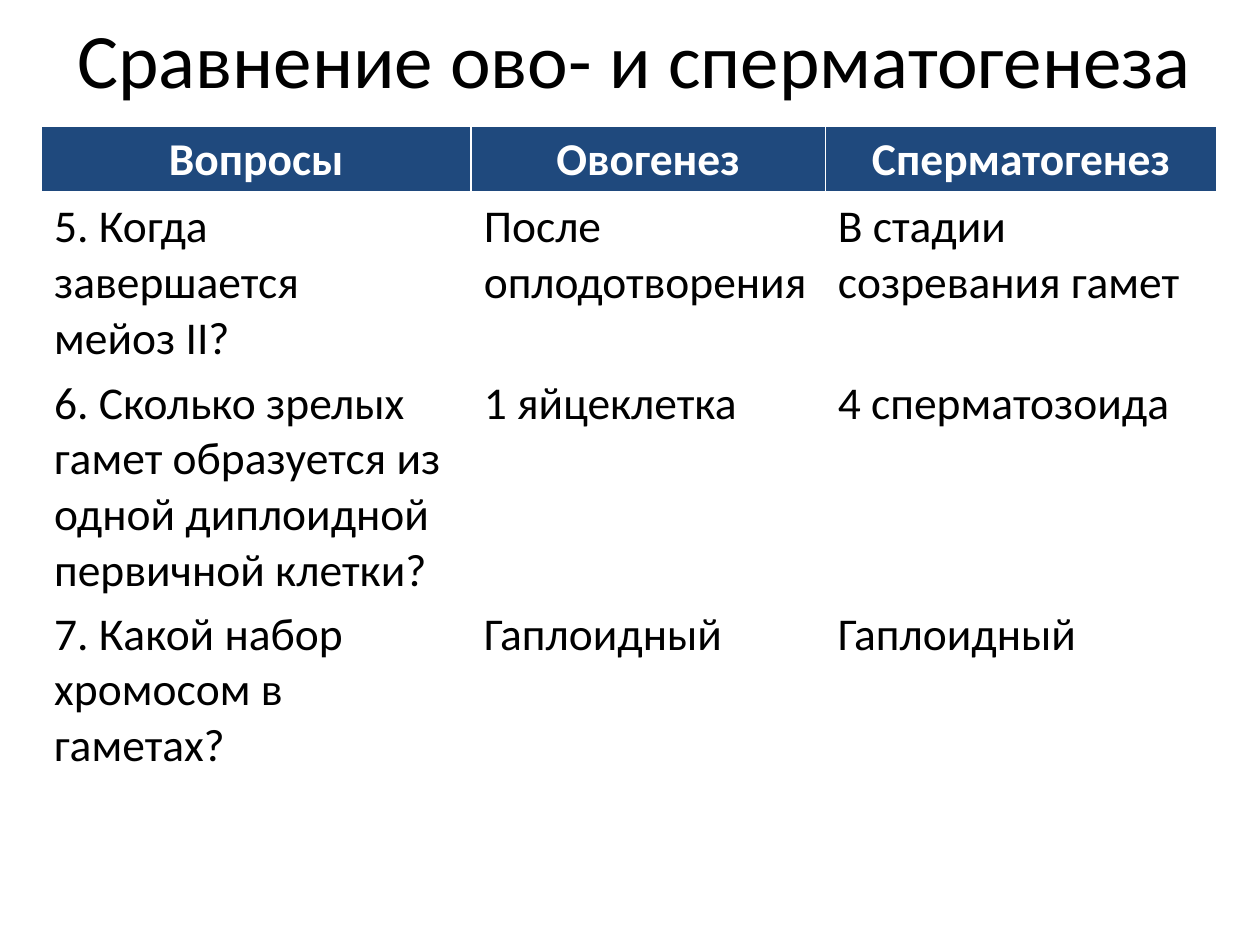
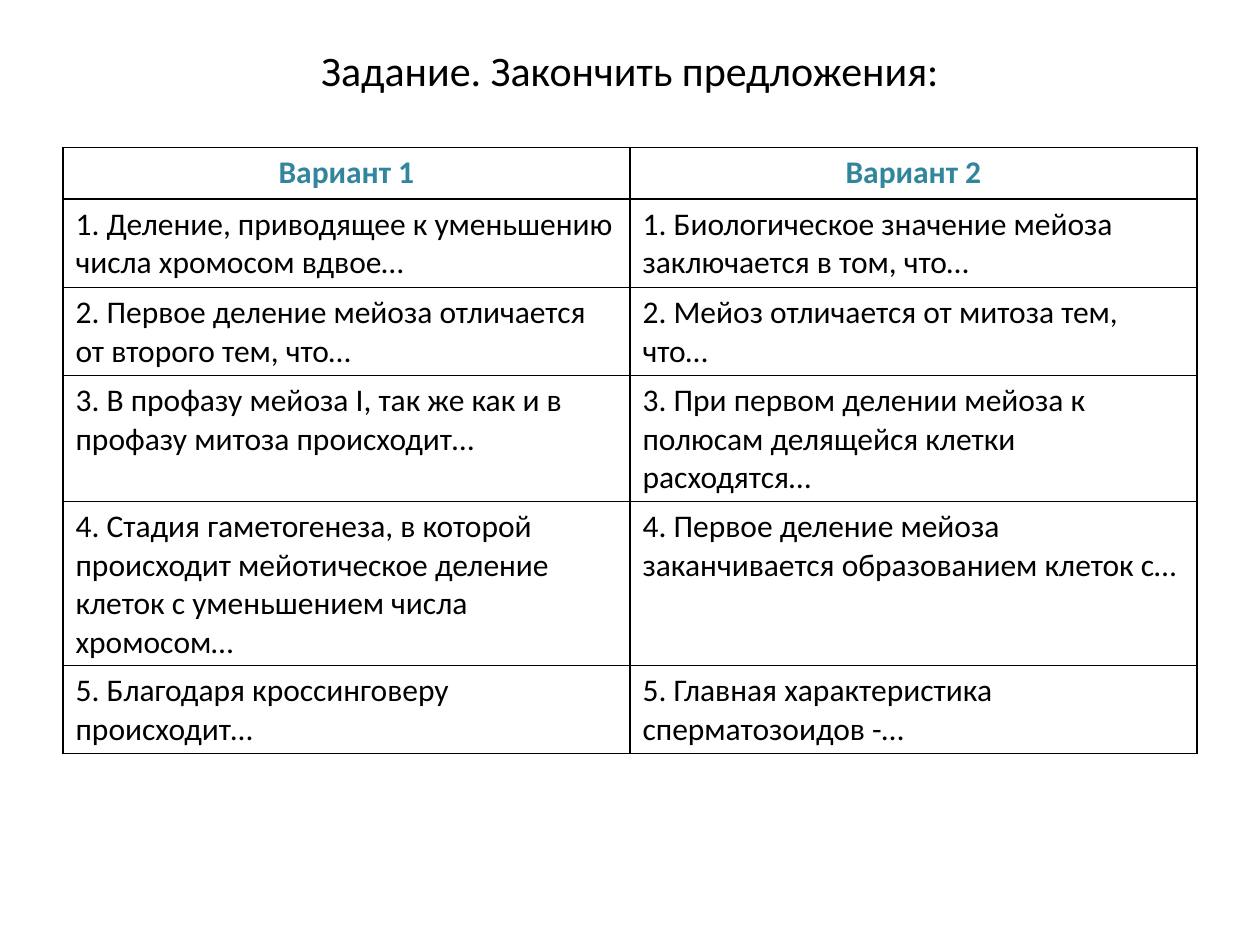
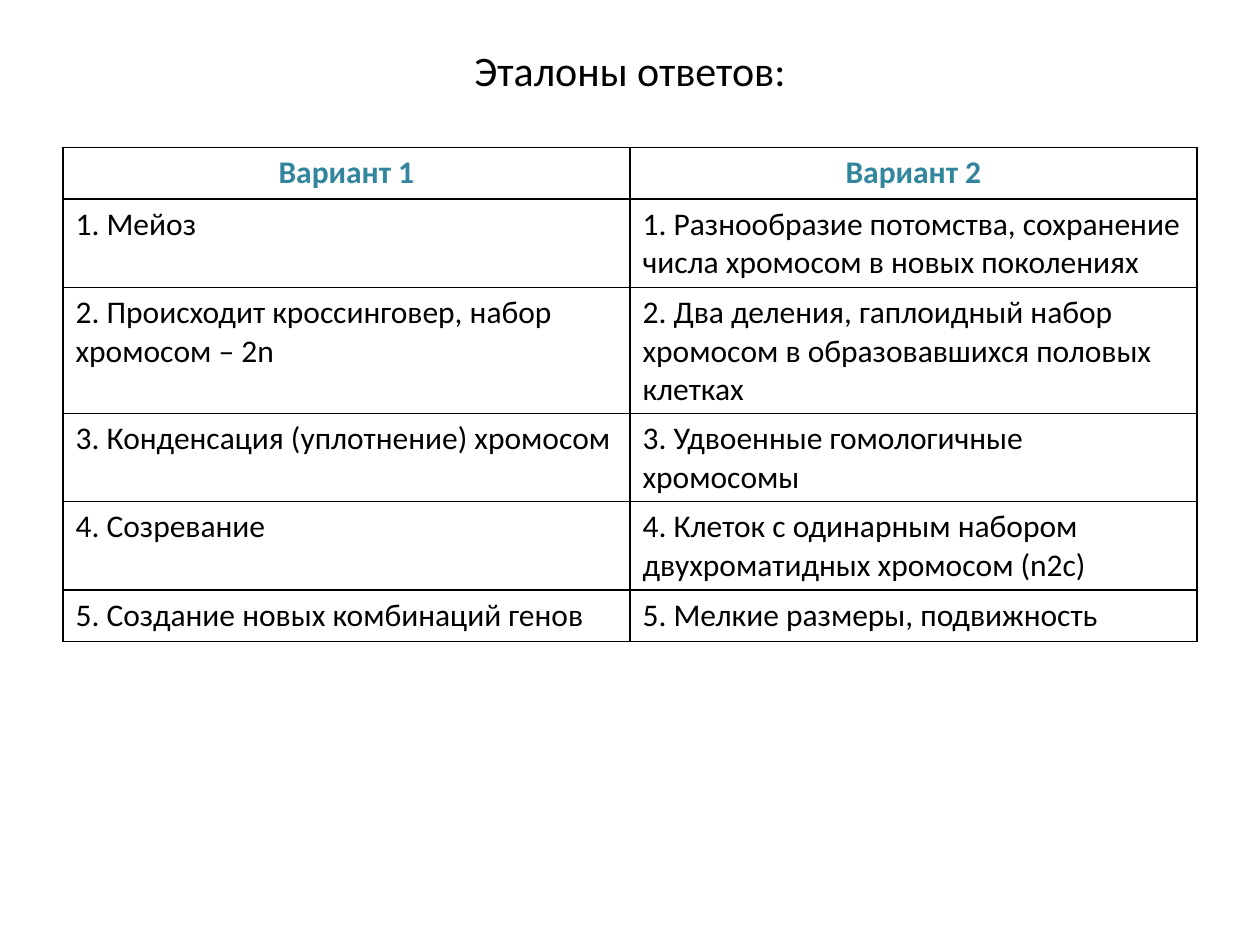
from lxml import etree
from pptx import Presentation
from pptx.dml.color import RGBColor
from pptx.enum.text import MSO_ANCHOR, PP_ALIGN
from pptx.oxml.ns import qn
from pptx.util import Inches, Pt

CENTER, LEFT = PP_ALIGN.CENTER, PP_ALIGN.LEFT
TOP, MIDDLE = MSO_ANCHOR.TOP, MSO_ANCHOR.MIDDLE
FONT = "Calibri"
COLORS = {"black": "000000", "white": "FFFFFF", "navy": "1F497D", "teal": "31859C"}

COMPARISON = [
    ("Вопросы", "Овогенез", "Сперматогенез"),
    ("5. Когда завершается\nмейоз II?", "После оплодотворения", "В стадии созревания гамет"),
    ("6. Сколько зрелых гамет образуется из одной диплоидной первичной клетки?",
     "1 яйцеклетка", "4 сперматозоида"),
    ("7. Какой набор хромосом в гаметах?", "Гаплоидный", "Гаплоидный"),
]
VARIANTS = ("Вариант 1", "Вариант 2")
TASKS = [
    VARIANTS,
    ("1. Деление, приводящее к уменьшению числа хромосом вдвое…",
     "1. Биологическое значение мейоза заключается в том, что…"),
    ("2. Первое деление мейоза отличается от второго тем, что…",
     "2. Мейоз отличается от митоза тем, что…"),
    ("3. В профазу мейоза I, так же как и в профазу митоза происходит…",
     "3. При первом делении мейоза к полюсам делящейся клетки расходятся…"),
    ("4. Стадия гаметогенеза, в которой происходит мейотическое деление клеток "
     "с уменьшением числа хромосом…",
     "4. Первое деление мейоза заканчивается образованием клеток с…"),
    ("5. Благодаря кроссинговеру происходит...",
     "5. Главная характеристика сперматозоидов -…"),
]
ANSWERS = [
    VARIANTS,
    ("1. Мейоз", "1. Разнообразие потомства, сохранение числа хромосом в новых поколениях"),
    ("2. Происходит кроссинговер, набор хромосом – 2n",
     "2. Два деления, гаплоидный набор хромосом в образовавшихся половых клетках"),
    ("3. Конденсация (уплотнение) хромосом", "3. Удвоенные гомологичные хромосомы"),
    ("4. Созревание", "4. Клеток с одинарным набором двухроматидных хромосом (n2c)"),
    ("5. Создание новых комбинаций генов", "5. Мелкие размеры, подвижность"),
]


def style_text(tf, size, color, align, bold=False):
    """Give every paragraph of a text frame the same look."""
    for p in tf.paragraphs:
        p.alignment = align
        p.font.name = FONT
        p.font.size = Pt(size)
        p.font.bold = bold
        p.font.color.rgb = RGBColor.from_string(COLORS[color])


def add_title(s, box, text, size, anchor):
    """Add a centred title in the given box."""
    tf = s.shapes.add_textbox(*map(Inches, box)).text_frame
    tf.word_wrap = True
    tf.vertical_anchor = anchor
    tf.text = text
    style_text(tf, size, "black", CENTER)


def set_borders(cell, color, bottom=1):
    """Draw thin lines round a cell, with a bottom line of the given width."""
    tc_pr = cell._tc.get_or_add_tcPr()
    for side, width in (("L", 1), ("R", 1), ("T", 1), ("B", bottom)):
        ln = etree.SubElement(tc_pr, qn(f"a:ln{side}"), w=str(Pt(width)))
        fill = etree.SubElement(ln, qn("a:solidFill"))
        etree.SubElement(fill, qn("a:srgbClr"), val=COLORS[color])


def add_grid(s, box, cols, heights, rows, size, border, head_fill, head_color, head_line=1):
    """Add a table with a bold centred header row and plain white body rows."""
    table = s.shapes.add_table(len(rows), len(cols), *map(Inches, box)).table
    table.horz_banding = False
    for col, width in zip(table.columns, cols):
        col.width = Inches(width)
    for i, (row, height, texts) in enumerate(zip(table.rows, heights, rows)):
        row.height = Inches(height)
        head = i == 0
        for cell, text in zip(row.cells, texts):
            cell.text = text
            style_text(cell.text_frame, size, head_color if head else "black",
                       CENTER if head else LEFT, head)
            set_borders(cell, border, head_line if head else 1)
            cell.fill.solid()
            fill = head_fill if head else "white"
            cell.fill.fore_color.rgb = RGBColor.from_string(COLORS[fill])


def comparison_slide(s):
    """Build the slide that compares the two processes."""
    add_title(s, (0.25, 0, 9.58, 0.92), "Сравнение ово- и сперматогенеза", 44, MIDDLE)
    add_grid(s, (0.33, 1, 9.33, 4.58), (3.41, 2.81, 3.11), (0.5, 1.32, 1.73, 1.03),
             COMPARISON, 26, "white", "navy", "white", 3)


def variants_slide(s, title, rows):
    """Build a slide with two variants side by side."""
    add_title(s, (0.5, 0.3, 9, 1.25), title, 24, TOP)
    add_grid(s, (0.5, 1.17, 9, 2.46), (4.5, 4.5), [0.41] * len(rows),
             rows, 18, "black", "white", "teal")


def main():
    """Build and save the presentation."""
    prs = Presentation()
    prs.slide_width, prs.slide_height = Inches(10), Inches(7.5)
    blank = prs.slide_layouts[6]
    comparison_slide(prs.slides.add_slide(blank))
    for title, rows in (("Задание. Закончить предложения:", TASKS), ("Эталоны ответов:", ANSWERS)):
        variants_slide(prs.slides.add_slide(blank), title, rows)
    prs.save("out.pptx")


if __name__ == "__main__":
    main()
